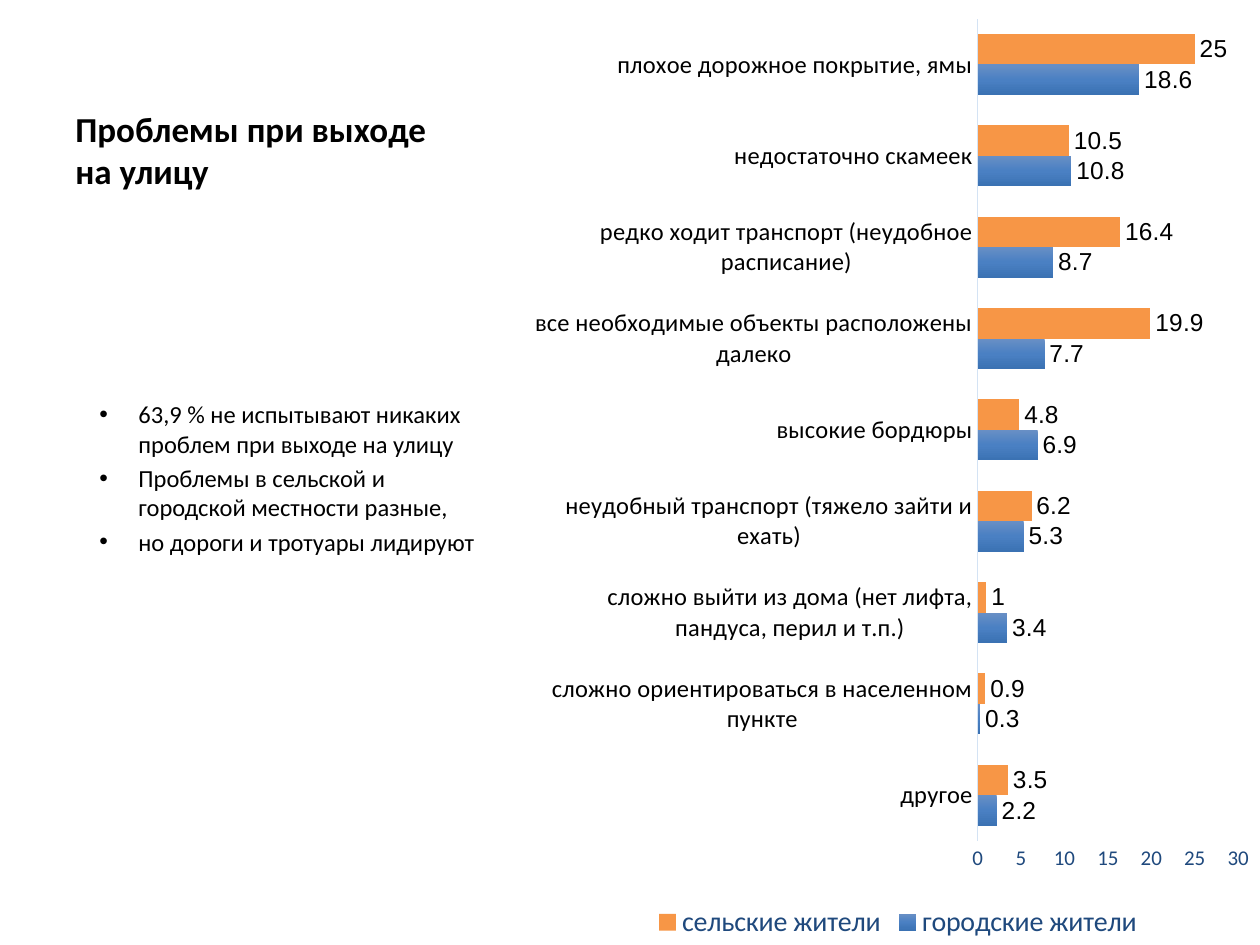
from copy import deepcopy

from lxml import etree
from pptx import Presentation
from pptx import util as u
from pptx.chart.data import CategoryChartData
from pptx.dml.color import RGBColor
from pptx.enum import chart as charts
from pptx.enum import text
from pptx.oxml import parse_xml
from pptx.oxml.ns import nsdecls, qn

SCALE = 914400 / 126  # EMU in one px
COLORS = {
    "text": "000000",
    "accent_text": "1F497D",
    "axis": "D4E3F4",
    "rural": "F79646",
    "urban_top": "688FC5",
    "urban_middle": "4A80C3",
    "urban_bottom": "3B72B3",
}
POINTS = [
    "63,9 % не испытывают никаких проблем при выходе на улицу",
    "Проблемы в сельской и городской местности разные,",
    "но дороги и тротуары лидируют",
]
# Problem, urban share, rural share
PROBLEMS = [
    ("другое", 2.2, 3.5),
    ("сложно ориентироваться в населенном пункте", 0.3, 0.9),
    ("сложно выйти из дома (нет лифта, пандуса, перил и т.п.)", 3.4, 1),
    ("неудобный транспорт (тяжело зайти и ехать)", 5.3, 6.2),
    ("высокие бордюры", 6.9, 4.8),
    ("все необходимые объекты расположены далеко", 7.7, 19.9),
    ("редко ходит транспорт (неудобное расписание)", 8.7, 16.4),
    ("недостаточно скамеек", 10.8, 10.5),
    ("плохое дорожное покрытие, ямы", 18.6, 25),
]


def px(*lengths):
    return [u.Emu(round(length * SCALE)) for length in lengths]


def color(name):
    return RGBColor.from_string(COLORS[name])


def set_font(font, size, name="Calibri", ink="text", bold=False):
    font.size, font.name, font.bold = u.Pt(size), name, bold
    font.color.rgb = color(ink)


def add_text(page, place, lines, size, bold=False, anchor=text.MSO_ANCHOR.TOP):
    frame = page.shapes.add_textbox(*px(*place)).text_frame
    frame.word_wrap = True
    frame.vertical_anchor = anchor
    frame.text = "\n".join(lines)
    for para in frame.paragraphs:
        set_font(para.font, size, bold=bold)
    return frame


def add_bullets(frame, indent, gap):
    for para in frame.paragraphs:
        para.space_before = u.Pt(gap)
        props = para._p.get_or_add_pPr()
        props.set("marL", str(indent))
        props.set("indent", str(-indent))
        bullet = [
            parse_xml(f'<a:buFont {nsdecls("a")} typeface="Arial"/>'),
            parse_xml(f'<a:buChar {nsdecls("a")} char="•"/>'),
        ]
        spacing = props.find(qn("a:spcBef"))
        for item in reversed(bullet):
            spacing.addnext(item)


def fill_gradient(fill, series, names):
    """Spread the named colours evenly from top to bottom."""
    fill.gradient()
    fill.gradient_angle = 270
    stops = next(series._element.iter(qn("a:gsLst")))
    stops.insert(1, deepcopy(stops[0]))
    for stop, name, position in zip(fill.gradient_stops, names, (0, 0.5, 1)):
        stop.color.rgb = color(name)
        stop.position = position


def place_plot(chart, **shares):
    """Fix the inner plot area, given as shares of the chart."""
    area = chart._chartSpace.chart.plotArea
    for old in area.findall(qn("c:layout")):
        area.remove(old)
    layout = parse_xml(f'<c:layout {nsdecls("c")}><c:manualLayout/></c:layout>')
    settings = {"layoutTarget": "inner", "xMode": "edge", "yMode": "edge", **shares}
    for tag, value in settings.items():
        etree.SubElement(layout[0], qn(f"c:{tag}")).set("val", str(value))
    area.insert(0, layout)


def style_axes(chart):
    for axis, size, ink in (
        (chart.category_axis, 14, "text"),
        (chart.value_axis, 12, "accent_text"),
    ):
        axis.has_major_gridlines = False
        axis.major_tick_mark = axis.minor_tick_mark = charts.XL_TICK_MARK.NONE
        set_font(axis.tick_labels.font, size, ink=ink)
    chart.category_axis.format.line.color.rgb = color("axis")
    chart.category_axis.format.line.width = u.Pt(0.75)
    chart.value_axis.format.line.fill.background()
    chart.value_axis.minimum_scale, chart.value_axis.maximum_scale = 0, 30
    chart.value_axis.major_unit = 5


def add_bar_chart(page, place):
    names, urban, rural = zip(*PROBLEMS)
    data = CategoryChartData()
    data.categories = names
    data.add_series("городские жители", urban)
    data.add_series("сельские жители", rural)
    kind = charts.XL_CHART_TYPE.BAR_CLUSTERED
    chart = page.shapes.add_chart(kind, *px(*place), data).chart
    chart.has_title = False
    set_font(chart.font, 10)
    style_axes(chart)

    # Bars and their values
    plot = chart.plots[0]
    plot.gap_width, plot.overlap = 100, 0
    plot.vary_by_categories = False
    for series in plot.series:
        labels = series.data_labels
        labels.show_value = True
        labels.position = charts.XL_LABEL_POSITION.OUTSIDE_END
        set_font(labels.font, 14, "Arial")
    urban_bars, rural_bars = plot.series
    fill_gradient(urban_bars.format.fill, urban_bars,
                  ("urban_top", "urban_middle", "urban_bottom"))
    rural_bars.format.fill.solid()
    rural_bars.format.fill.fore_color.rgb = color("rural")

    # Legend
    chart.has_legend = True
    chart.legend.position = charts.XL_LEGEND_POSITION.BOTTOM
    chart.legend.include_in_layout = False
    set_font(chart.legend.font, 16, ink="accent_text")
    place_plot(chart, x=0.61, y=0.02, w=0.36, h=0.87)


def main():
    deck = Presentation()
    deck.slide_width, deck.slide_height = px(1260, 945)
    page = deck.slides.add_slide(deck.slide_layouts[6])

    # Heading and findings
    add_text(page, (63, 38, 415, 160), ["Проблемы при выходе на улицу"], 20,
             bold=True, anchor=text.MSO_ANCHOR.BOTTOM)
    findings = add_text(page, (87, 393, 407, 416), POINTS, 14)
    add_bullets(findings, indent=px(39)[0], gap=2.8)

    # Urban and rural answers
    add_bar_chart(page, (535, 0, 725, 945))
    deck.save("out.pptx")


if __name__ == "__main__":
    main()
